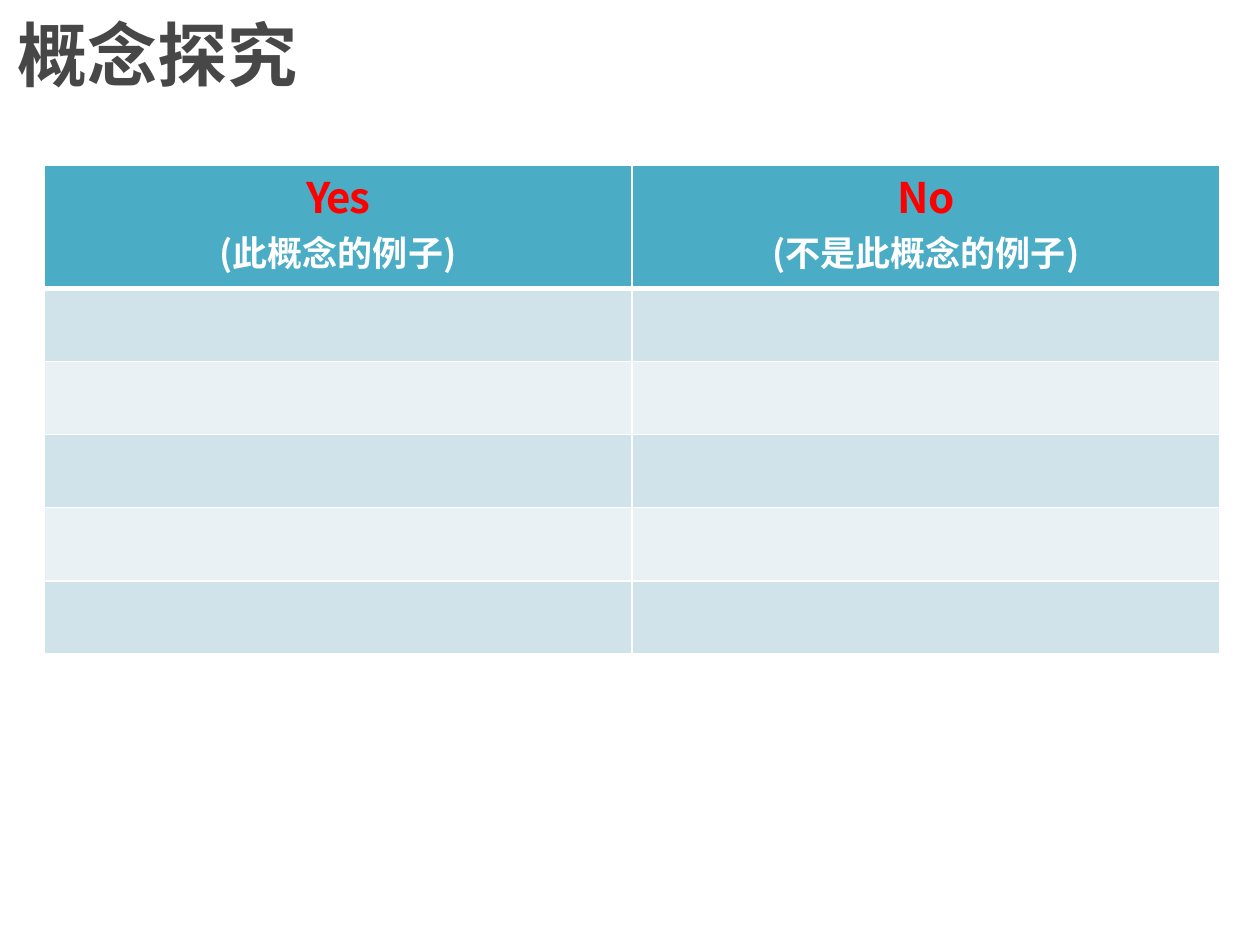
from lxml import etree
from pptx import Presentation
from pptx.dml.color import RGBColor
from pptx.enum.text import MSO_ANCHOR, PP_ALIGN
from pptx.oxml.ns import qn
from pptx.util import Inches, Pt

CENTER = PP_ALIGN.CENTER
MIDDLE = MSO_ANCHOR.MIDDLE
BLANK_LAYOUT = 6
FONT = "Noto Sans CJK SC"
COLORS = {
    "title": "474747",
    "answer": "FF0000",
    "white": "FFFFFF",
    "header": "4BACC6",
    "dark_band": "D0E3EA",
    "light_band": "E9F1F5",
}
# answer, explanation, letter spacing of the answer in 1/100 pt
HEADINGS = [("Yes", "(此概念的例子)", -100), ("No", "(不是此概念的例子)", -10)]
BODY_ROWS = 5
HEADER_HEIGHT, BODY_HEIGHT = 0.98, 0.58


def write(paragraph, text, size, color, spacing=0):
    run = paragraph.add_run()
    run.text = text
    formats = {"name": FONT, "size": Pt(size), "bold": True}
    for key, value in formats.items():
        setattr(run.font, key, value)
    run.font.color.rgb = RGBColor.from_string(COLORS[color])
    properties = run._r.get_or_add_rPr()
    etree.SubElement(properties, qn("a:ea")).set("typeface", FONT)
    if spacing:
        properties.set("spc", str(spacing))


def set_margins(holder, size):
    for side in ("left", "right", "top", "bottom"):
        setattr(holder, f"margin_{side}", Inches(size))


def add_title(slide, text):
    box = slide.shapes.add_textbox(Inches(0.04), Inches(0.05), Inches(9.19), Inches(0.75))
    frame = box.text_frame
    frame.word_wrap = True
    frame.vertical_anchor = MIDDLE
    write(frame.paragraphs[0], text, 40, "title")


def style_cell(cell, fill, top=1, bottom=1):
    """Give a cell white borders, with widths in points, and a plain fill."""
    properties = cell._tc.get_or_add_tcPr()
    for side, width in {"L": 1, "R": 1, "T": top, "B": bottom}.items():
        line = etree.SubElement(properties, qn(f"a:ln{side}"), w=str(Pt(width)))
        solid = etree.SubElement(line, qn("a:solidFill"))
        etree.SubElement(solid, qn("a:srgbClr"), val=COLORS["white"])
    cell.fill.solid()
    cell.fill.fore_color.rgb = RGBColor.from_string(COLORS[fill])
    set_margins(cell, 0)


def fill_heading(cell, answer, explanation, spacing):
    frame = cell.text_frame
    first, second = frame.paragraphs[0], frame.add_paragraph()
    first.space_before = Pt(2.7)
    write(first, answer, 24, "answer", spacing)
    write(second, explanation, 20, "white")
    for paragraph in (first, second):
        paragraph.alignment = CENTER


def add_example_table(slide):
    height = HEADER_HEIGHT + BODY_ROWS * BODY_HEIGHT
    table = slide.shapes.add_table(
        BODY_ROWS + 1, len(HEADINGS),
        Inches(0.35), Inches(1.31), Inches(9.33), Inches(height),
    ).table
    for index, row in enumerate(table.rows):
        row.height = Inches(BODY_HEIGHT if index else HEADER_HEIGHT)
        for cell, heading in zip(row.cells, HEADINGS):
            if index == 0:
                style_cell(cell, "header", bottom=3)
                fill_heading(cell, *heading)
            else:
                band = "dark_band" if index % 2 else "light_band"
                style_cell(cell, band, top=3 if index == 1 else 1)


def main():
    presentation = Presentation()
    presentation.slide_width = Inches(10)
    presentation.slide_height = Inches(7.5)
    slide = presentation.slides.add_slide(presentation.slide_layouts[BLANK_LAYOUT])
    add_title(slide, "概念探究")
    add_example_table(slide)
    presentation.save("out.pptx")


if __name__ == "__main__":
    main()
